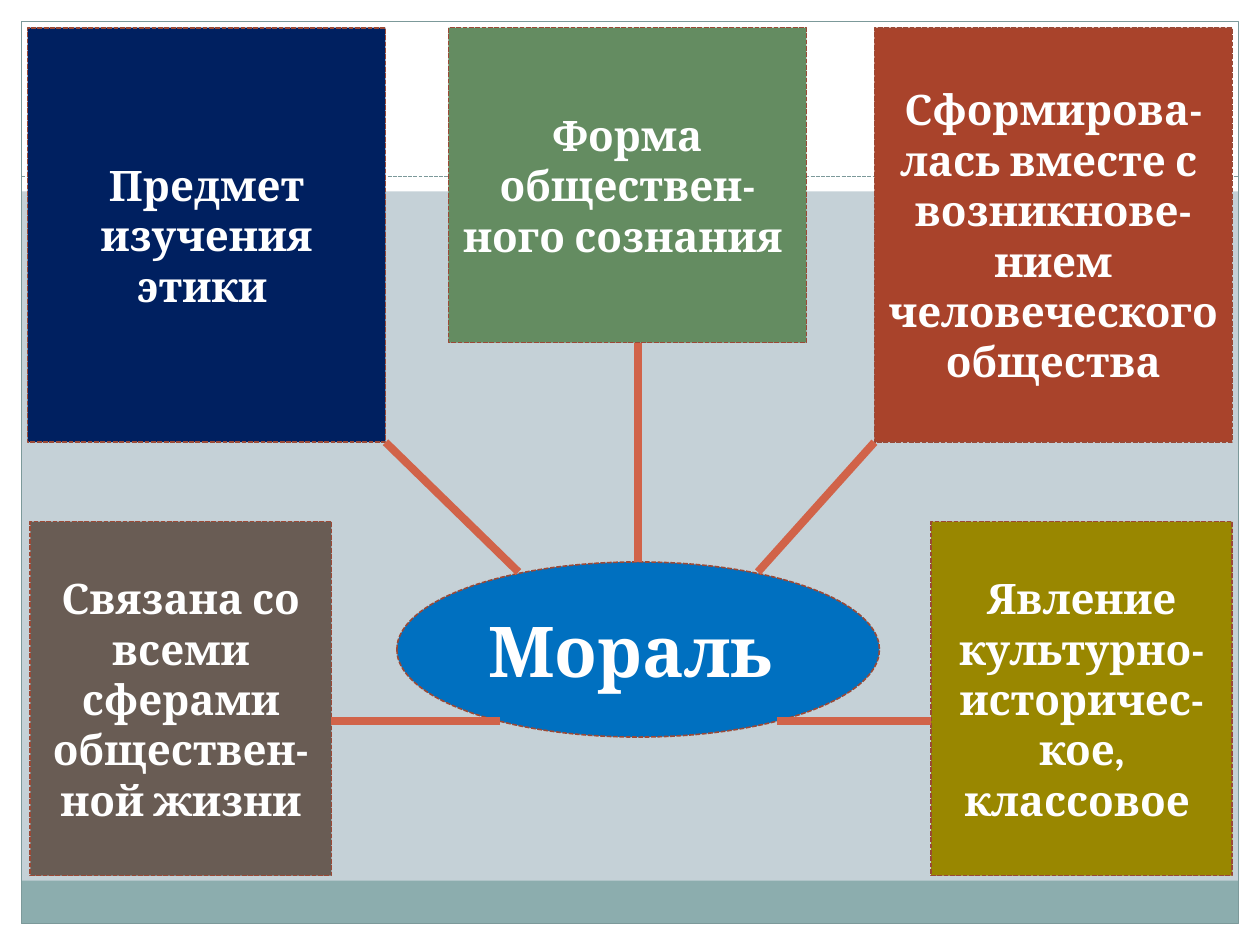
from collections import namedtuple

from pptx import Presentation
from pptx.dml.color import RGBColor
from pptx.enum.dml import MSO_LINE_DASH_STYLE as Dash
from pptx.enum.shapes import MSO_CONNECTOR as Link, MSO_SHAPE as Form
from pptx.enum.text import MSO_ANCHOR as Anchor, PP_ALIGN as Align
from pptx.oxml.ns import qn
from pptx.util import Inches, Pt

COLS, ROWS = 100, 75  # grid over the whole slide
WIDE, HIGH = Inches(10), Inches(7.5)

HUES = {
    "back": "C5D1D7", "white": "FFFFFF", "band": "8CADAE", "rim": "7C999A",
    "edge": "9B4936", "ray": "D16349", "navy": "002060", "green": "648C61",
    "red": "A9432B", "brown": "695C54", "olive": "998700", "blue": "0070C0",
}
RIM = {"hue": "rim", "width": 0.75}
EDGE = {"hue": "edge", "width": 0.9, "dash": Dash.SQUARE_DOT}
RAY = {"hue": "ray", "width": 4.5}
FONT = {"name": "Cambria", "bold": True}

Box = namedtuple("Box", "x y w h")


def rgb(hue):
    return RGBColor.from_string(HUES[hue])


def across(cols):
    return round(WIDE * cols / COLS)


def down(rows):
    return round(HIGH * rows / ROWS)


def within(area, x, y, w, h):
    return Box(area.x + x, area.y + y, w, h)


def style(line, look):
    line.color.rgb = rgb(look["hue"])
    line.width = Pt(look["width"])
    if "dash" in look:
        line.dash_style = look["dash"]


def block(slide, box, hue=None, look=None, form=Form.RECTANGLE):
    shape = slide.shapes.add_shape(
        form, across(box.x), down(box.y), across(box.w), down(box.h))
    shape.shadow.inherit = False
    if hue:
        shape.fill.solid()
        shape.fill.fore_color.rgb = rgb(hue)
    else:
        shape.fill.background()
    if look:
        style(shape.line, look)
    else:
        shape.line.fill.background()
    return shape


def label(shape, lines, size):
    frame = shape.text_frame
    frame.word_wrap = True
    frame.vertical_anchor = Anchor.MIDDLE
    for i, text in enumerate(lines):
        para = frame.paragraphs[0] if i == 0 else frame.add_paragraph()
        para.alignment = Align.CENTER
        run = para.add_run()
        run.text = text
        for key, value in {**FONT, "size": Pt(size)}.items():
            setattr(run.font, key, value)
        run.font.color.rgb = rgb("white")


def stroke(slide, start, end, look):
    line = slide.shapes.add_connector(
        Link.STRAIGHT, across(start[0]), down(start[1]),
        across(end[0]), down(end[1]))
    style(line.line, look)
    props = line._element.spPr
    props.append(props.makeelement(qn("a:effectLst"), {}))
    return line


def backdrop(slide, area):
    """White margins, foot band, thin rim and the dashed title rule."""
    fill = slide.background.fill
    fill.solid()
    fill.fore_color.rgb = rgb("back")
    pad = 1.7
    wide, high = area.w - 2 * pad, area.h - 2 * pad
    parts = [
        (0, area.h - pad, area.w, pad, "white"),
        (0, 0, area.w, 15.2, "white"),
        (0, 0, pad, area.h, "white"),
        (area.w - pad, 0, pad, area.h, "white"),
        (pad, area.h - pad - 3.4, wide, 3.4, "band"),
    ]
    for *place, hue in parts:
        block(slide, within(area, *place), hue)
    block(slide, within(area, pad, pad, wide, high), look=RIM)
    rule = area.y + 14
    stroke(slide, (area.x + pad, rule), (area.x + area.w - pad, rule),
           {**RIM, "dash": Dash.SQUARE_DOT})


def mind_map(slide, area):
    """Five cards around the oval, joined to it by rays."""
    top_w, tall, low_w, low_h = 28.4, 32.9, 23.9, 28.1
    low_y = area.h - low_h
    form = within(area, 33.4, 0, top_w, 25)
    left = within(area, 0, 0, top_w, tall)
    right = within(area, area.w - top_w, 0, top_w, tall)
    ties = within(area, 0.2, low_y, low_w, low_h)
    event = within(area, area.w - low_w, low_y, low_w, low_h)
    core = within(area, 29.3, 42.4, 38.3, 13.9)

    # Cards
    cards = [
        (form, "green", ["Форма обществен-", "ного сознания "]),
        (event, "olive", ["Явление культурно-историчес-кое, классовое "]),
        (right, "red", ["Сформирова-лась вместе с ",
                        "возникнове-нием человеческого общества"]),
        (left, "navy", ["Предмет изучения этики "]),
        (ties, "brown", ["Связана со всеми сферами обществен-ной жизни"]),
    ]
    for box, hue, lines in cards:
        label(block(slide, box, hue, EDGE), lines, 24)

    # Centre
    oval = block(slide, core, "blue", EDGE, Form.OVAL)
    label(oval, ["Мораль "], 40)

    # Rays
    mid = core.x + core.w / 2
    stem = stroke(slide, (mid, core.y), (mid, form.y + form.h), RAY)
    stem.begin_connect(oval, 0)
    high, low = core.y + 0.8, core.y + 12.6
    rays = [
        ((right.x, right.y + tall), (mid + 9.5, high)),
        ((left.x + top_w, left.y + tall), (mid - 9.5, high)),
        ((mid + 11, low), (event.x, low)),
        ((ties.x + low_w, low), (mid - 11, low)),
    ]
    for start, end in rays:
        stroke(slide, start, end, RAY)


def main():
    deck = Presentation()
    deck.slide_width, deck.slide_height = WIDE, HIGH
    slide = deck.slides.add_slide(deck.slide_layouts[6])
    backdrop(slide, Box(0, 0, COLS, ROWS))
    mind_map(slide, Box(2.2, 2.2, 95.6, 67.3))
    deck.save("out.pptx")


if __name__ == "__main__":
    main()
